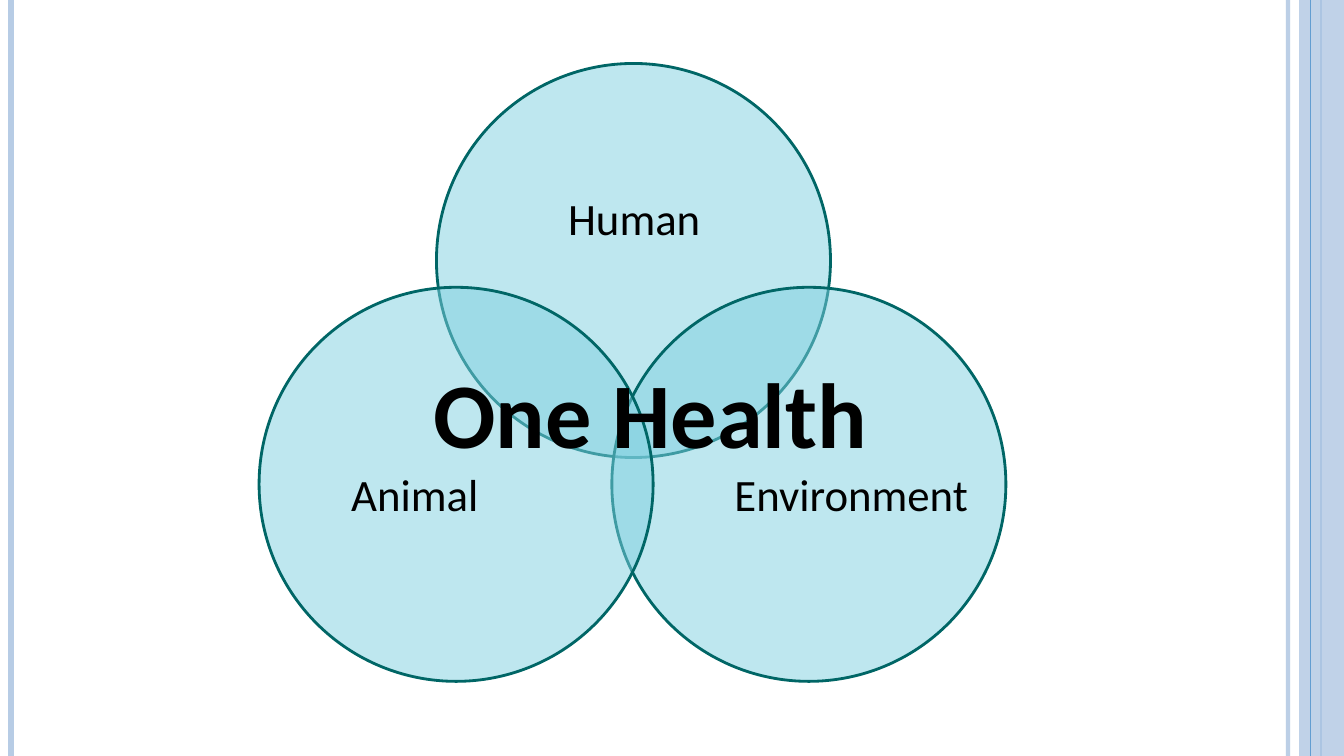
from dataclasses import dataclass

from lxml.etree import SubElement
from pptx import Presentation
from pptx.dml.color import RGBColor
from pptx.enum.shapes import MSO_CONNECTOR, MSO_SHAPE
from pptx.enum.text import MSO_ANCHOR, PP_ALIGN
from pptx.oxml.ns import qn
from pptx.util import Cm, Pt

PAGE_WIDTH, PAGE_HEIGHT = 33.87, 19.05
CIRCLE_SIZE = 9.93

# Vertical rules: x in cm, width in points, theme colour, opacity in percent
RULES_BEHIND_BAND = [
    (32.46, 3, "pale", 93),
    (0.28, 4.5, "pale", 100),
    (33.3, 1.5, "accent", 100),
]
RULES_ABOVE_BAND = [(33.02, 0.75, "accent", 100)]
BAND_LEFT = 32.74

# Name, circle (left, top), label (left, top, width, height), in cm
CIRCLES = [
    ("Human", (11.0, 1.6), (12.34, 3.33, 7.29, 4.47)),
    ("Environment", (15.42, 7.24), (18.47, 9.8, 5.97, 5.46)),
    ("Animal", (6.53, 7.24), (7.47, 9.8, 5.97, 5.46)),
]
CENTRE = ("One Health", (10.67, 8.84, 11.56, 3.07))


@dataclass(frozen=True)
class Theme:
    font: str = "Calibri"
    label_size: int = 32
    centre_size: int = 66
    text: RGBColor = RGBColor(0x00, 0x00, 0x00)
    pale: RGBColor = RGBColor(0xB7, 0xCC, 0xE5)
    accent: RGBColor = RGBColor(0x62, 0x9D, 0xD1)
    circle: RGBColor = RGBColor(0x7F, 0xD1, 0xE1)
    outline: RGBColor = RGBColor(0x00, 0x66, 0x66)


THEME = Theme()


def set_opacity(properties, percent):
    """Make the first solid colour below a properties element translucent."""
    colour = next(properties.iter(qn("a:srgbClr")))
    SubElement(colour, qn("a:alpha"), val=str(percent * 1000))


def add_rules(page, rules):
    for x, width, colour, opacity in rules:
        rule = page.shapes.add_connector(
            MSO_CONNECTOR.STRAIGHT, Cm(x), Cm(0), Cm(x), Cm(PAGE_HEIGHT))
        rule.line.width = Pt(width)
        rule.line.color.rgb = getattr(THEME, colour)
        properties = rule.element.spPr
        if opacity < 100:
            set_opacity(properties, opacity)
        SubElement(properties, qn("a:effectLst"))


def add_filled_shape(page, kind, place, colour, opacity):
    shape = page.shapes.add_shape(kind, *map(Cm, place))
    shape.shadow.inherit = False
    shape.fill.solid()
    shape.fill.fore_color.rgb = colour
    set_opacity(shape.element.spPr, opacity)
    shape.line.fill.background()
    return shape


def add_text(page, words, place, size, bold=False):
    """Add one line of text and return its frame and paragraph."""
    frame = page.shapes.add_textbox(*map(Cm, place)).text_frame
    para = frame.paragraphs[0]
    span = para.add_run()
    span.text = words
    span.font.name = THEME.font
    span.font.size = Pt(size)
    span.font.bold = bold
    span.font.color.rgb = THEME.text
    return frame, para


def add_circle(page, name, corner, label_place):
    circle = add_filled_shape(
        page, MSO_SHAPE.OVAL, (*corner, CIRCLE_SIZE, CIRCLE_SIZE), THEME.circle, 50)
    circle.line.color.rgb = THEME.outline
    circle.line.width = Pt(2)
    frame, para = add_text(page, name, label_place, THEME.label_size)
    frame.word_wrap = True
    frame.vertical_anchor = MSO_ANCHOR.MIDDLE
    frame.margin_left = frame.margin_right = Cm(0)
    frame.margin_top = frame.margin_bottom = Cm(0)
    para.alignment = PP_ALIGN.CENTER
    para.line_spacing = 0.9


def main():
    deck = Presentation()
    deck.slide_width, deck.slide_height = Cm(PAGE_WIDTH), Cm(PAGE_HEIGHT)
    page = deck.slides.add_slide(deck.slide_layouts.get_by_name("Blank"))

    add_rules(page, RULES_BEHIND_BAND)
    band = (BAND_LEFT, 0, PAGE_WIDTH - BAND_LEFT, PAGE_HEIGHT)
    add_filled_shape(page, MSO_SHAPE.RECTANGLE, band, THEME.pale, 87)
    add_rules(page, RULES_ABOVE_BAND)

    for name, corner, label_place in CIRCLES:
        add_circle(page, name, corner, label_place)

    words, place = CENTRE
    frame, _ = add_text(page, words, place, THEME.centre_size, bold=True)
    frame.word_wrap = False

    deck.save("out.pptx")


if __name__ == "__main__":
    main()
